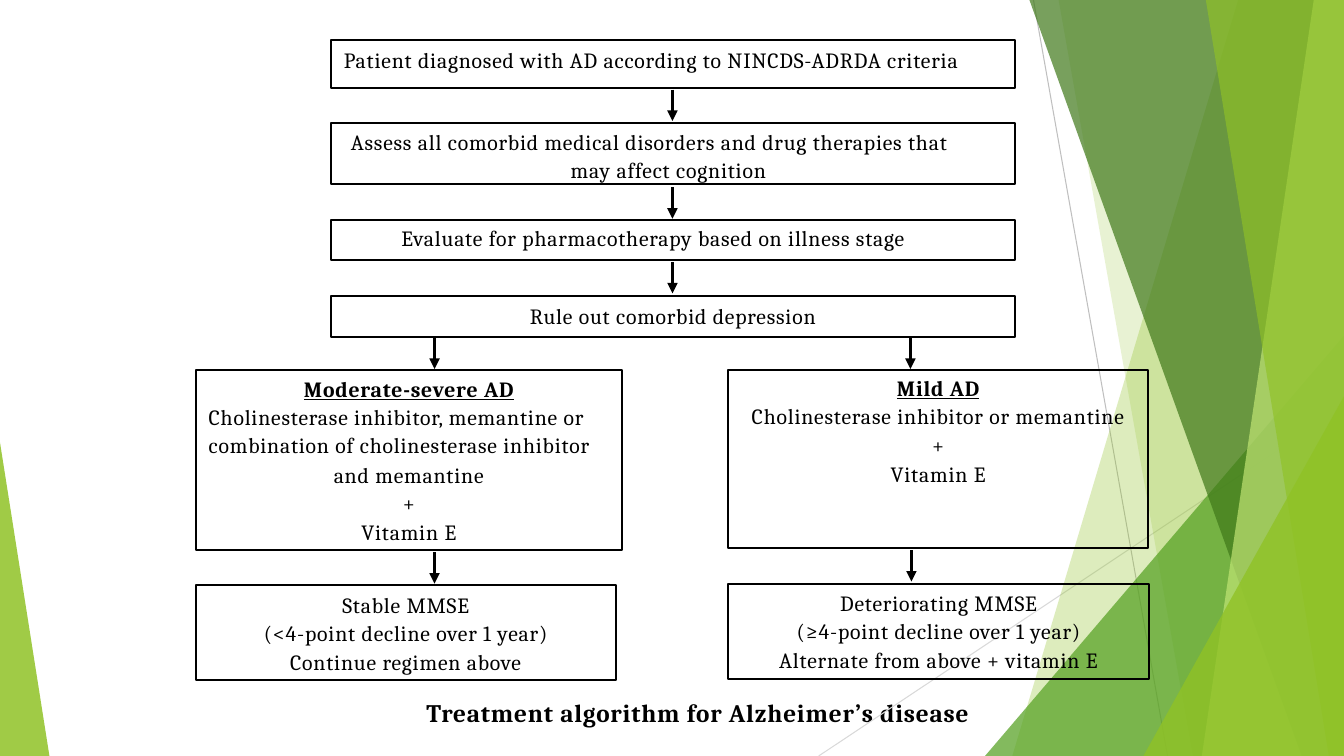
from dataclasses import dataclass

from lxml import etree
from pptx import Presentation
from pptx.dml.color import RGBColor
from pptx.enum.shapes import MSO_CONNECTOR, MSO_SHAPE
from pptx.enum.text import MSO_ANCHOR, MSO_AUTO_SIZE, PP_ALIGN
from pptx.oxml.ns import qn
from pptx.util import Pt

PX = 9144  # EMU per px, 100 px to the inch
SLIDE_WIDTH, SLIDE_HEIGHT = 1333, 750
TITLE_ONLY = 5
RECTANGLE = MSO_SHAPE.RECTANGLE
TRIANGLE = MSO_SHAPE.ISOSCELES_TRIANGLE
STRAIGHT = MSO_CONNECTOR.STRAIGHT
LEFT, CENTER = PP_ALIGN.LEFT, PP_ALIGN.CENTER
TOP = MSO_ANCHOR.TOP
NO_AUTOFIT = MSO_AUTO_SIZE.NONE


@dataclass(frozen=True)
class Theme:
    font: str = "Cambria"
    body_size: float = 15.5
    title_size: float = 18
    tracking: str = "60"  # hundredths of a point
    ink: str = "000000"
    rule_dark: str = "BFBFBF"
    rule_light: str = "D9D9D9"
    leaf: str = "90C226"
    grass: str = "54A021"
    forest: str = "3F7819"
    lime: str = "C0E474"
    rule_width: float = 0.75
    box_width: float = 1.5
    arrow_width: float = 2.5


@dataclass(frozen=True)
class Line:
    text: str
    before: float = 1.7
    align: PP_ALIGN = CENTER
    margin: int = 0
    indent: int = 0
    spacing: float = 1.0
    heading: bool = False


THEME = Theme()

# left, top, width, height, top inset, lines
BOXES = [
    (328, 40, 679, 47, 6, [
        Line("Patient diagnosed with AD according to NINCDS-ADRDA criteria", 4.2, LEFT, 13)]),
    (328, 122, 679, 61, 3, [
        Line("Assess all comorbid medical disorders and drug therapies that\n"
             "may affect cognition", 2.3, LEFT, 238, -218, 1.09)]),
    (328, 218, 679, 40, 5, [
        Line("Evaluate for pharmacotherapy based on illness stage", 4, LEFT, 70)]),
    (328, 294, 679, 40, 6, [Line("Rule out comorbid depression", 4.2)]),
    (194, 367, 423, 179, 3, [
        Line("Moderate-severe AD", 2.2, spacing=1.09, heading=True),
        Line("Cholinesterase inhibitor, memantine or combination of "
             "cholinesterase inhibitor", 0, LEFT, 13, spacing=1.09),
        Line("and memantine", 2.4),
        Line("+"),
        Line("Vitamin E", 2.4)]),
    (722, 367, 417, 177, 5, [
        Line("Mild AD", 3.9, heading=True),
        Line("Cholinesterase inhibitor or memantine"),
        Line("+"),
        Line("Vitamin E", 2.4)]),
    (194, 580, 417, 95, 7, [
        Line("Stable MMSE", 4.7),
        Line("(<4-point decline over 1 year)"),
        Line("Continue regimen above")]),
    (722, 579, 418, 95, 6, [
        Line("Deteriorating MMSE", 4.2),
        Line("(≥4-point decline over 1 year)"),
        Line("Alternate from above + vitamin E")]),
]

ARROW_LENGTH = 31
ARROW_STARTS = [(667, 89), (667, 186), (667, 260),
                (431, 335), (903, 335), (431, 548), (904, 546)]


def px(*lengths):
    return [length * PX for length in lengths]


def color(value):
    return RGBColor.from_string(value)


def paint(shape, fill, opacity):
    """Give a shape a translucent fill with no outline; opacity is in percent."""
    shape.shadow.inherit = False
    shape.line.fill.background()
    shape.fill.solid()
    shape.fill.fore_color.rgb = color(fill)
    tint = shape.fill._xPr.find(qn("a:solidFill")).find(qn("a:srgbClr"))
    etree.SubElement(tint, qn("a:alpha")).set("val", str(opacity * 1000))


def add_facet(slide, points, fill, opacity):
    builder = slide.shapes.build_freeform(*points[0], scale=PX)
    builder.add_line_segments(points[1:], close=True)
    paint(builder.convert_to_shape(), fill, opacity)


def add_triangle(slide, bounds, apex, fill, opacity):
    triangle = slide.shapes.add_shape(TRIANGLE, *px(*bounds))
    triangle.adjustments[0] = apex
    paint(triangle, fill, opacity)


def add_line(slide, ends, line_color, width):
    connector = slide.shapes.add_connector(STRAIGHT, *px(*ends))
    connector.line.color.rgb = color(line_color)
    connector.line.width = Pt(width)
    etree.SubElement(connector._element.spPr, qn("a:effectLst"))
    return connector


def add_arrow(slide, x, top):
    arrow = add_line(slide, (x, top, x, top + ARROW_LENGTH), THEME.ink, THEME.arrow_width)
    etree.SubElement(arrow.line._get_or_add_ln(), qn("a:tailEnd")).set("type", "triangle")


def format_runs(paragraph, size, bold, underline=False):
    for run in paragraph.runs:
        run.font.name = THEME.font
        run.font.size = Pt(size)
        run.font.bold = bold
        run.font.underline = underline
        run.font.color.rgb = color(THEME.ink)
        run._r.get_or_add_rPr().set("spc", THEME.tracking)


def prepare_frame(frame, top_inset):
    frame.word_wrap = True
    frame.auto_size = NO_AUTOFIT
    frame.vertical_anchor = TOP
    frame.margin_left = frame.margin_right = frame.margin_bottom = 0
    frame.margin_top = top_inset * PX


def add_box(slide, left, top, width, height, top_inset, lines):
    box = slide.shapes.add_shape(RECTANGLE, *px(left, top, width, height))
    box.shadow.inherit = False
    box.fill.background()
    box.line.color.rgb = color(THEME.ink)
    box.line.width = Pt(THEME.box_width)
    frame = box.text_frame
    prepare_frame(frame, top_inset)
    frame.text = "\n".join("" for _ in lines)
    for paragraph, line in zip(frame.paragraphs, lines):
        paragraph.text = line.text
        paragraph.alignment = line.align
        paragraph.space_before = Pt(line.before)
        paragraph.line_spacing = line.spacing
        properties = paragraph._p.get_or_add_pPr()
        properties.set("marL", str(line.margin * PX))
        properties.set("indent", str(line.indent * PX))
        format_runs(paragraph, THEME.body_size, line.heading, line.heading)


def add_backdrop(slide):
    right, bottom = SLIDE_WIDTH, SLIDE_HEIGHT
    add_line(slide, (1025, 0, 1158, bottom), THEME.rule_dark, THEME.rule_width)
    add_line(slide, (right, 403, 812, bottom), THEME.rule_light, THEME.rule_width)

    def add_band(top_x, bottom_x, fill, opacity):
        """Fill from a slanted edge to the right side of the slide."""
        corners = [(top_x, 0), (right, 0), (right, bottom), (bottom_x, bottom)]
        add_facet(slide, corners, fill, opacity)

    add_band(1228, 1004, THEME.leaf, 30)
    add_band(1050, 1183, THEME.leaf, 20)
    add_triangle(slide, (977, 333, 356, 417), 1, THEME.grass, 72)
    add_band(1021, 1291, THEME.forest, 70)
    add_band(1303, 1192, THEME.lime, 70)
    add_band(1196, 1318, THEME.leaf, 65)
    add_triangle(slide, (1134, 393, 199, 357), 1, THEME.leaf, 80)
    add_triangle(slide, (0, 439, 49, 311), 0, THEME.leaf, 85)


def place_title(slide, text):
    title = slide.shapes.title
    title.left, title.top, title.width, title.height = px(423, 691, 557, 33)
    frame = title.text_frame
    frame.text = text
    prepare_frame(frame, 1)
    paragraph = frame.paragraphs[0]
    paragraph.alignment = LEFT
    paragraph.space_before = Pt(1)
    format_runs(paragraph, THEME.title_size, True)


def main():
    presentation = Presentation()
    presentation.slide_width, presentation.slide_height = px(SLIDE_WIDTH, SLIDE_HEIGHT)
    slide = presentation.slides.add_slide(presentation.slide_layouts[TITLE_ONLY])
    add_backdrop(slide)
    for box in BOXES:
        add_box(slide, *box)
    for x, top in ARROW_STARTS:
        add_arrow(slide, x, top)
    place_title(slide, "Treatment algorithm for Alzheimer’s disease")
    presentation.save("out.pptx")


if __name__ == "__main__":
    main()
